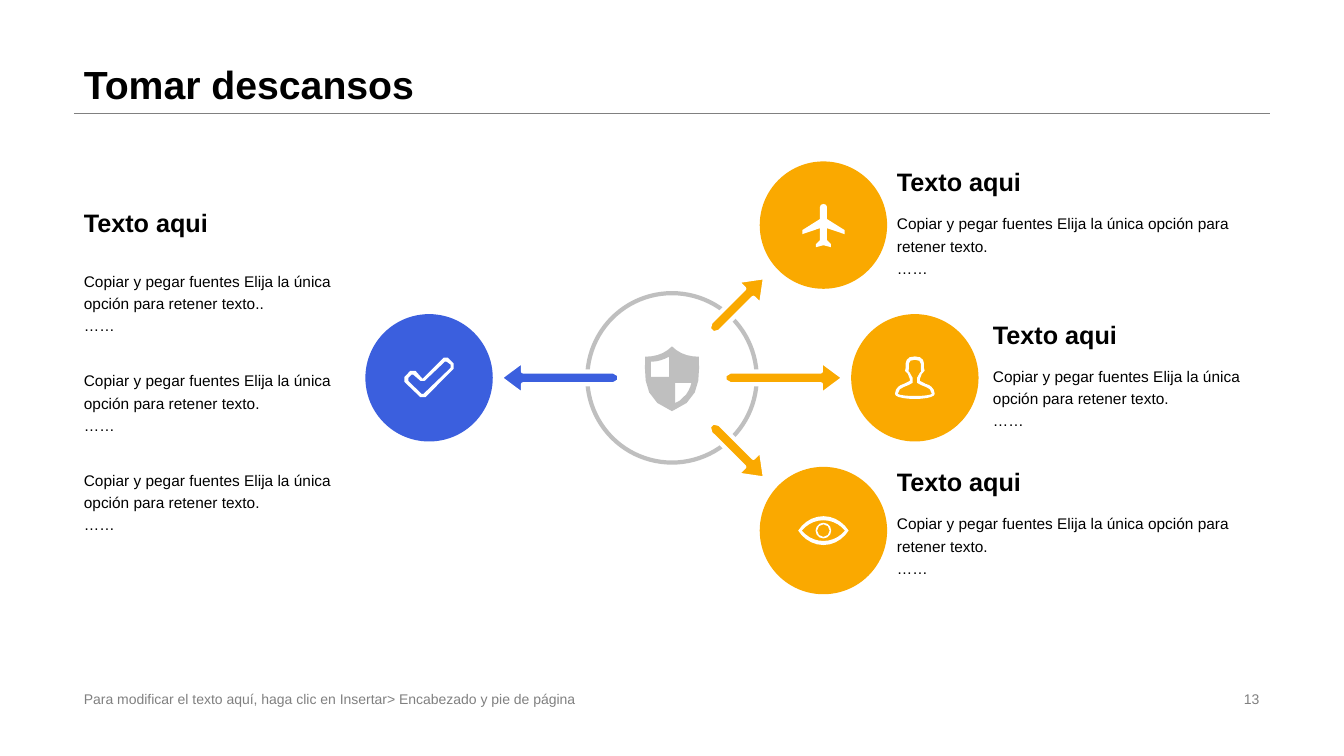
"""Build a hub slide with four labelled circles joined by arrows."""
import math

from lxml import etree
from pptx import Presentation
from pptx import util as u
from pptx.dml.color import RGBColor
from pptx.enum import shapes, text
from pptx.oxml.ns import qn

COLOURS = {"ink": "000000", "grey": "808080", "silver": "BFBFBF", "white": "FFFFFF",
           "blue": "3B5FDE", "orange": "FAA900"}
LEFT, RIGHT = 52.8, 907.2
CENTRE_X, CENTRE_Y = 480, 269.9
STEP_LENGTH, MOST_STEPS = 3, 5


def flatten(segments):
    points = [segments[0]]
    for segment in segments[1:]:
        if len(segment) == 2:
            points.append(segment)
            continue
        curve = [points[-1], segment[:2], segment[2:4], segment[4:]]
        chord = math.dist(curve[0], curve[3])
        steps = max(1, min(MOST_STEPS, round(chord / STEP_LENGTH)))
        for step in range(1, steps + 1):
            t = step / steps
            weights = ((1 - t) ** 3, 3 * t * (1 - t) ** 2, 3 * t * t * (1 - t), t ** 3)
            points.append(tuple(sum(w * p[axis] for w, p in zip(weights, curve))
                                for axis in (0, 1)))
    return points


def mirrored(half):
    points = flatten(half)
    return points + [(-x, y) for x, y in reversed(points) if x]


def half_circle(radius):
    handle = 0.55 * radius
    return [(0, -radius), (handle, -radius, radius, -handle, radius, 0),
            (radius, handle, handle, radius, 0, radius)]


SHIELD = [
    mirrored([(0, -22.5), (5, -17.5, 11.2, -15.1, 19.2, -15.1),
              (19.2, -2, 22, 15.8, 0, 23.8)]),
    flatten([(-15, -11.5), (-10, -11.5, -6.3, -13, -2, -15.1), (-2, -0.7), (-15, -0.7)]),
    flatten([(8.2, 13.7), (6.5, 15.8, 4.5, 17.2, 2.2, 18), (2.2, 3.6), (13.9, 3.6),
             (13.9, 4.3, 13.2, 5.8, 13, 6.5), (11.8, 9.4, 10.4, 12.2, 8.2, 13.7)]),
]
CHECK = [
    flatten([(17.6, -6.5), (-2.5, 13.7), (-3.2, 14.8, -5.4, 14.8, -6.3, 13.7),
             (-17.6, 2.9), (-18.4, 1.4, -18.4, 0, -17.6, -0.7), (-13.3, -5),
             (-12.6, -5.8, -11.2, -5.8, -9.7, -5), (-4.7, 0.7), (10.4, -14.4),
             (11.2, -15.1, 12.6, -15.1, 13.3, -14.4), (17.6, -10.1),
             (18.4, -9.4, 18.4, -7.9, 17.6, -6.5)]),
    flatten([(15.5, -9.4), (12.6, -11.5), (11.9, -12.2, 11.2, -12.2, 11.2, -11.5),
             (-3.2, 2.2), (-4, 2.9, -5.4, 2.9, -6.1, 2.2), (-11.2, -2.2),
             (-11.2, -2.9, -11.9, -2.9, -12.6, -2.2), (-14.8, 0),
             (-15.5, 0.7, -15.5, 1.4, -14.8, 2.2), (-5.4, 11.5),
             (-4.7, 12.2, -4, 12.2, -4, 11.5), (15.5, -7.2),
             (15.9, -7.9, 15.9, -8.6, 15.5, -9.4)]),
]
PLANE = [mirrored([(0, -15.1), (1.8, -14.5), (2.5, -13), (2.5, -4.3),
                   (15.1, 3.6), (15.1, 6.5), (2.5, 2.2), (2.5, 10.8), (5.4, 13.7),
                   (5.4, 15.8), (0, 14.4)])]
PERSON = [
    mirrored([(0, -15.3), (4.5, -15.5, 6.3, -13, 6.5, -10.5),
              (6.6, -9, 6.6, -7.9, 6.5, -7.2), (7.2, -6.5, 7.2, -5.8, 7, -5),
              (6.5, -3.6, 5.8, -2.9, 5, -2.9), (5, -1.4, 4.3, 0, 3.6, 0.7), (3.6, 2.2),
              (5, 2.9), (6.5, 3.6, 8.6, 5, 10.1, 5.2),
              (11.5, 5.8, 14.2, 8, 14.2, 11.5), (14.2, 13.7, 8, 15.1, 0, 15.1)]),
    mirrored([(0, -12.9), (2.9, -12.9, 4.1, -12, 4.3, -10),
              (4.6, -8.6, 4.4, -7.2, 4.3, -6.5), (4.9, -5.8, 4.6, -5, 4.5, -4.5),
              (4.3, -3.8, 4, -3.6, 3.6, -3.6), (3.6, -2, 2.5, -0.7, 1.6, 0), (1.6, 3.6),
              (2.4, 3.7, 3.6, 4.5, 4.5, 5.2), (5.5, 6, 7.4, 6.4, 8, 6.6),
              (9.6, 7.2, 12.2, 8.5, 12.2, 11.5), (11, 12.4, 6, 13, 0, 13)]),
]
EYE = [
    mirrored([(0, -10.3), (7.6, -10.3, 14.2, -6, 18, 0), (14.2, 6, 7.6, 10.3, 0, 10.3)]),
    mirrored([(0, -7.4), (6, -7.4, 11.5, -4.7, 15.4, 0), (11.5, 4.7, 6, 7.4, 0, 7.4)]),
    mirrored(half_circle(5.6)),
    mirrored(half_circle(4.5)),
]


class SlideBuilder:
    def __init__(self, slide, font="Arial"):
        self.slide = slide
        self.font = font

    def colour(self, name):
        return RGBColor.from_string(COLOURS[name])

    def paint(self, shape, fill, line=None):
        shape.shadow.inherit = False
        shape.fill.solid()
        shape.fill.fore_color.rgb = self.colour(fill)
        if line:
            shape.line.color.rgb = self.colour(line)
            shape.line.width = u.Pt(3)
        else:
            shape.line.fill.background()

    def text(self, lines, left, top, width, height, size, colour="ink", bold=False,
             anchor=text.MSO_ANCHOR.MIDDLE, align=text.PP_ALIGN.LEFT, spacing=1.0):
        box = self.slide.shapes.add_textbox(u.Pt(left), u.Pt(top), u.Pt(width), u.Pt(height))
        frame = box.text_frame
        frame.word_wrap = True
        frame.vertical_anchor = anchor
        frame.text = "\n".join(lines)
        for paragraph in frame.paragraphs:
            paragraph.alignment = align
            paragraph.line_spacing = spacing
            paragraph.font.name = self.font
            paragraph.font.size = u.Pt(size)
            paragraph.font.bold = bold
            paragraph.font.color.rgb = self.colour(colour)

    def heading(self, left, top, width):
        self.text(["Texto aqui"], left, top, width, 34.6, 18, bold=True)

    def body(self, left, top, width, ending="."):
        sentence = "Copiar y pegar fuentes Elija la única opción para retener texto"
        self.text([sentence + ending, "……"], left, top, width, 62.6, 11,
                  anchor=text.MSO_ANCHOR.TOP, spacing=1.2)

    def rule(self, left, right, y):
        connector = self.slide.shapes.add_connector(
            shapes.MSO_CONNECTOR.STRAIGHT, u.Pt(left), u.Pt(y), u.Pt(right), u.Pt(y))
        connector.line.color.rgb = self.colour("grey")
        connector.line.width = u.Pt(0.25)
        etree.SubElement(connector._element.spPr, qn("a:effectLst"))

    def circle(self, x, y, diameter, fill, line=None):
        shape = self.slide.shapes.add_shape(
            shapes.MSO_SHAPE.OVAL, u.Pt(x - diameter / 2), u.Pt(y - diameter / 2),
            u.Pt(diameter), u.Pt(diameter))
        self.paint(shape, fill, line)

    def outline(self, contours, x, y, fill, line=None):
        placed = [[(u.Pt(x + dx), u.Pt(y + dy)) for dx, dy in contour]
                  for contour in contours]
        builder = self.slide.shapes.build_freeform(*placed[0][0])
        for index, contour in enumerate(placed):
            if index:
                builder.move_to(*contour[0])
            builder.add_line_segments(contour[1:], close=True)
        self.paint(builder.convert_to_shape(), fill, line)

    def arrow(self, tip_x, tip_y, length, degrees, fill):
        head, wing, half = 16.4, 12.2, 4.6
        points = flatten([(0, 0), (-head, -wing), (-head, -half), (half - length, -half),
                          (-length - 1.5, -half, -length - 1.5, half, half - length, half),
                          (-head, half), (-head, wing)])
        cos, sin = math.cos(math.radians(degrees)), math.sin(math.radians(degrees))
        turned = [(x * cos - y * sin, x * sin + y * cos) for x, y in points]
        self.outline([turned], tip_x, tip_y, fill, "white")


def main():
    presentation = Presentation()
    presentation.slide_width, presentation.slide_height = u.Pt(960), u.Pt(540)
    builder = SlideBuilder(presentation.slides.add_slide(presentation.slide_layouts[6]))

    builder.rule(LEFT, RIGHT, 81)
    builder.text(["Tomar descansos"], LEFT, 0, RIGHT - LEFT, 81, 28, bold=True,
                 anchor=text.MSO_ANCHOR.BOTTOM, spacing=0.9)
    builder.text(["Para modificar el texto aquí, haga clic en Insertar> Encabezado y pie de página"],
                 LEFT, 491, 366.5, 16.6, 10, "grey")
    builder.text(["13"], 677.6, 491, 229, 16.6, 10, "grey", align=text.PP_ALIGN.RIGHT)

    builder.circle(CENTRE_X, CENTRE_Y, 121, "white", "silver")
    builder.outline(SHIELD, CENTRE_X, CENTRE_Y, "silver")

    rise = 109.1
    nodes = [(306.5, CENTRE_Y, "blue", CHECK), (588.2, CENTRE_Y - rise, "orange", PLANE),
             (653.5, CENTRE_Y, "orange", PERSON), (588.2, CENTRE_Y + rise, "orange", EYE)]
    for x, y, fill, icon in nodes:
        builder.circle(x, y, 91, fill)
    for x, y, length, degrees, fill in [
            (357.2, CENTRE_Y, 85.7, 180, "blue"), (602.8, CENTRE_Y, 85.7, 0, "orange"),
            (546.5, CENTRE_Y + 72, 55.2, 45, "orange"),
            (546.5, CENTRE_Y - 72, 55.2, -45, "orange")]:
        builder.arrow(x, y, length, degrees, fill)
    for x, y, fill, icon in nodes:
        builder.outline(icon, x, y, "white")

    builder.heading(LEFT, 141.8, 205.2)
    for row, ending in enumerate(["..", ".", "."]):
        builder.body(LEFT, 188 + 71.2 * row, 205.2, ending)
    for left, top in [(633.6, 112.4), (702.2, 221.3), (633.6, 326.7)]:
        builder.heading(left, top, RIGHT - left)
        builder.body(left, top + 34.6, RIGHT - left)

    presentation.save("out.pptx")


if __name__ == "__main__":
    main()
